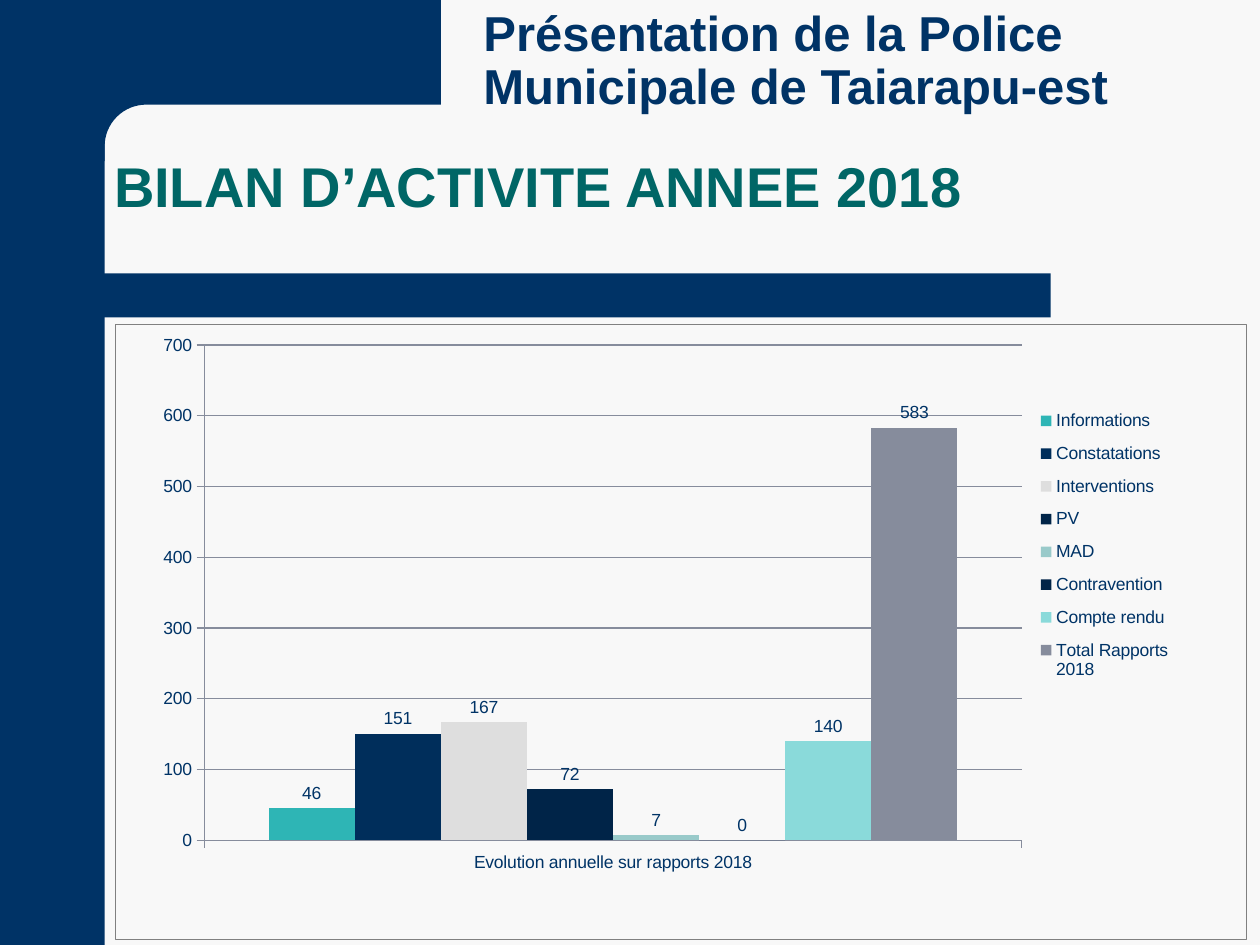
from math import cos, pi, sin

from lxml import etree
from pptx import Presentation
from pptx.chart.data import CategoryChartData
from pptx.dml.color import RGBColor
from pptx.enum.chart import XL_CHART_TYPE as ChartType, XL_LABEL_POSITION as LabelPosition
from pptx.enum.chart import XL_LEGEND_POSITION as LegendPosition, XL_TICK_MARK as TickMark
from pptx.enum.shapes import MSO_SHAPE as Shape
from pptx.enum.text import MSO_ANCHOR as Anchor, PP_ALIGN as Align
from pptx.oxml import parse_xml
from pptx.oxml.ns import nsdecls, qn
from pptx.util import Cm, Pt

NAVY, TEAL, PAPER, GRID = "003366", "006666", "F8F8F8", "868C9C"


def paint(target, color):
    """Give a fill or a line format one solid colour."""
    fill = target.fill if hasattr(target, "fill") else target
    fill.solid()
    fill.fore_color.rgb = RGBColor.from_string(color)


def manual_layout(x, y, width, height, inner=False):
    """Build a chart layout from fractions of the chart's size."""
    layout = parse_xml(f"<c:layout {nsdecls('c')}><c:manualLayout/></c:layout>")
    values = {"layoutTarget": "inner"} if inner else {}
    values.update(xMode="edge", yMode="edge", x=x, y=y, w=width, h=height)
    for tag, value in values.items():
        etree.SubElement(layout[0], qn(f"c:{tag}")).set("val", str(value))
    return layout


presentation = Presentation()
presentation.slide_width, presentation.slide_height = Cm(25.4), Cm(19.05)
slide = presentation.slides.add_slide(presentation.slide_layouts[6])
paint(slide.background.fill, PAPER)

# Navy frame: side rail, corner with a rounded inside, band with a round end
frame = []
for kind, left, top, width, height in [
    (Shape.RECTANGLE, 0, 0, 2.11, 19.05),
    (Shape.RECTANGLE, 1.7, 5.51, 19.48, 0.89),
    (Shape.FLOWCHART_DELAY, 0.64, 5.51, 1.09, 0.89),
]:
    frame.append(slide.shapes.add_shape(kind, Cm(left), Cm(top), Cm(width), Cm(height)))
frame[-1].rotation = 180

center, radius, steps = 2.95, 0.84, 16
angles = [pi / 2 * step / steps for step in range(steps + 1)]
arc = [(center - radius * sin(a), center - radius * cos(a)) for a in angles]
outline = [(8.89, 2.11), *arc, (2.11, 3.25), (1.27, 3.25), (1.27, 0)]
corner = slide.shapes.build_freeform(Cm(8.89), 0)
corner.add_line_segments([(Cm(x), Cm(y)) for x, y in outline], close=True)
frame.append(corner.convert_to_shape())

for shape in frame:
    shape.shadow.inherit = False
    paint(shape.fill, NAVY)
    shape.line.fill.background()

# Headings
for text, size, color, corner_ratio, margin, box in [
    ("BILAN D’ACTIVITE ANNEE 2018", 32, TEAL, 0.217, 0, (2.11, 2.31, 23.29, 3)),
    ("Présentation de la Police Municipale de Taiarapu-est", 28, NAVY, 0.5, 0.18,
     (9.2, 0, 16.2, 2.51)),
]:
    shape = slide.shapes.add_shape(Shape.ROUNDED_RECTANGLE, *map(Cm, box))
    shape.adjustments[0] = corner_ratio
    shape.shadow.inherit = False
    shape.fill.background()
    shape.line.fill.background()
    frame_format = {"word_wrap": True, "vertical_anchor": Anchor.MIDDLE, "margin_left": Cm(margin)}
    for name, value in frame_format.items():
        setattr(shape.text_frame, name, value)
    paragraph = shape.text_frame.paragraphs[0]
    paragraph.alignment = Align.LEFT
    paragraph.line_spacing = 0.9
    run = paragraph.add_run()
    run.text = text
    for name, value in {"name": "Arial", "size": Pt(size), "bold": True}.items():
        setattr(run.font, name, value)
    paint(run.font, color)

# Chart of the year's reports
reports = [
    ("Informations", 46, "2EB5B5"),
    ("Constatations", 151, "002E5B"),
    ("Interventions", 167, "DEDEDE"),
    ("PV", 72, "002448"),
    ("MAD", 7, "99CACA"),
    ("Contravention", 0, "002448"),
    ("Compte rendu", 140, "8ADADA"),
    ("Total Rapports 2018", 583, "868C9C"),
]
data = CategoryChartData()
data.categories = ["Evolution annuelle sur rapports 2018"]
for name, value, color in reports:
    data.add_series(name, [value])
chart = slide.shapes.add_chart(
    ChartType.COLUMN_CLUSTERED, Cm(2.31), Cm(6.53), Cm(22.81), Cm(12.4), data
).chart
chart.has_title = False
for name, value in {"name": "Arial", "size": Pt(10), "bold": False}.items():
    setattr(chart.font, name, value)
paint(chart.font, NAVY)

plot = chart.plots[0]
plot_format = {"gap_width": 150, "overlap": 0, "vary_by_categories": False, "has_data_labels": True}
for name, value in plot_format.items():
    setattr(plot, name, value)
label_format = {"show_value": True, "position": LabelPosition.OUTSIDE_END}
for name, value in label_format.items():
    setattr(plot.data_labels, name, value)
for series, (name, value, color) in zip(plot.series, reports):
    paint(series.format, color)
    series.invert_if_negative = False

value_axis = chart.value_axis
axis_scale = {"minimum_scale": 0, "maximum_scale": 700, "major_unit": 100,
              "has_major_gridlines": True}
for name, value in axis_scale.items():
    setattr(value_axis, name, value)
for axis in (chart.category_axis, value_axis):
    axis.major_tick_mark = TickMark.OUTSIDE
    axis.minor_tick_mark = TickMark.NONE
for part in (chart.category_axis, value_axis, value_axis.major_gridlines):
    paint(part.format.line, GRID)
    part.format.line.width = Pt(0.75)

chart.has_legend = True
legend = chart.legend
legend.position = LegendPosition.RIGHT
legend.include_in_layout = False

# Fixed places for plot and legend, then the chart's own fill and border
chart_space = chart.element
plot_area = chart_space.find(".//" + qn("c:plotArea"))
legend_element = chart_space.find(".//" + qn("c:legend"))
for parent in (plot_area, legend_element):
    for old_layout in parent.findall(qn("c:layout")):
        parent.remove(old_layout)
plot_area.insert(0, manual_layout(0.079, 0.034, 0.723, 0.806, inner=True))
legend_element.find(qn("c:legendPos")).addnext(manual_layout(0.805, 0.12, 0.14, 0.48))
chart_space.find(qn("c:chart")).addnext(parse_xml(
    f"<c:spPr {nsdecls('c', 'a')}>"
    f'<a:solidFill><a:srgbClr val="{PAPER}"/></a:solidFill>'
    '<a:ln w="3175"><a:solidFill><a:srgbClr val="808080"/></a:solidFill></a:ln>'
    "</c:spPr>"
))

presentation.save("out.pptx")
